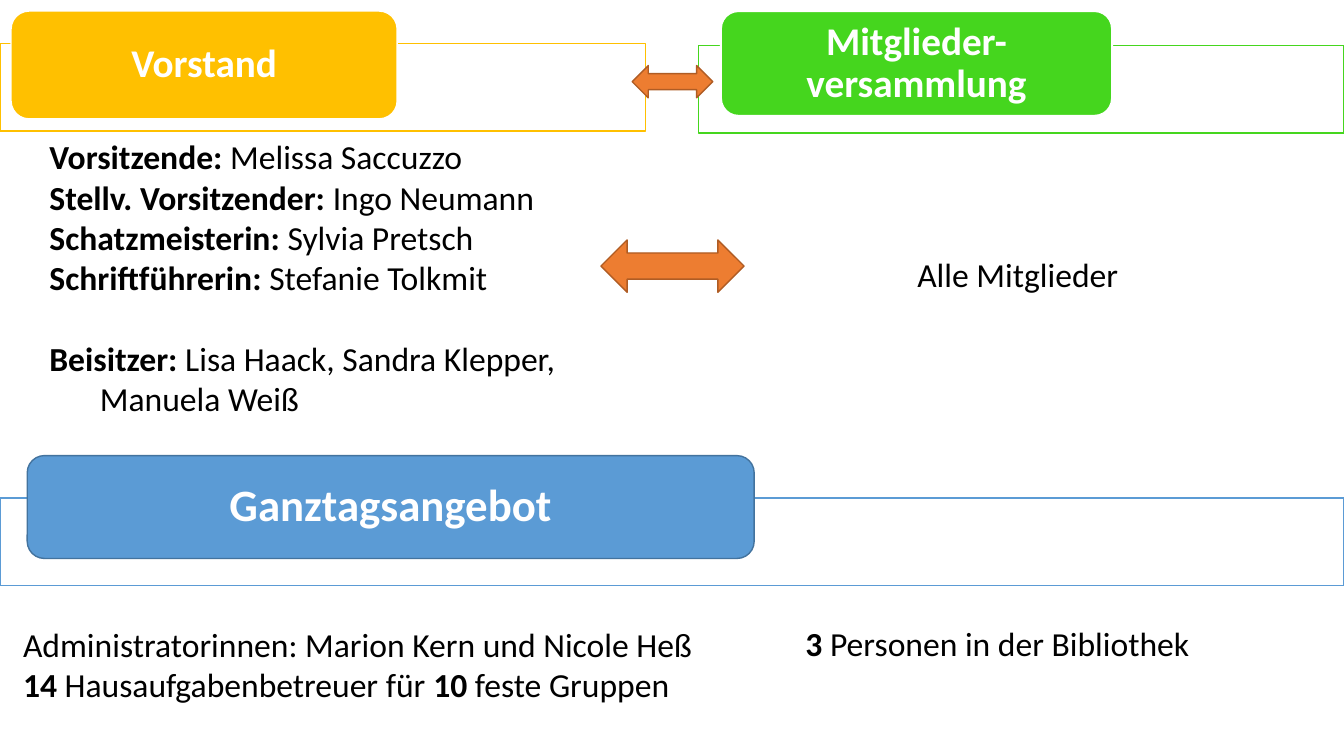
import pptx
import pptx.util
import pptx.dml.color
import pptx.enum.shapes
import pptx.enum.text
import lxml.etree

Inches, Pt = pptx.util.Inches, pptx.util.Pt
SHAPE = pptx.enum.shapes.MSO_SHAPE
ALIGN = pptx.enum.text.PP_ALIGN
ANCHOR = pptx.enum.text.MSO_ANCHOR
NS = "{http://schemas.openxmlformats.org/drawingml/2006/main}"

WHITE, BLACK = "FFFFFF", "000000"
GOLD, GREEN, BLUE, ORANGE = "FFC000", "45D61E", "5B9BD5", "ED7D31"


def paint(target, color):
    """Set a colour from a hex string on a fill, a line fill or a font."""
    if hasattr(target, "solid"):
        target.solid()
        target = target.fore_color
    else:
        target = target.color
    target.rgb = pptx.dml.color.RGBColor.from_string(color)


def write(frame, text, size=24, color=BLACK, align=ALIGN.LEFT, space=1.0,
          inset=(0.1, 0.05), anchor=ANCHOR.TOP, gaps=None, tab=None):
    """Write one paragraph per line; parts between asterisks are bold,
    and a vertical tab breaks the line. gaps: {line: points before}."""
    frame.word_wrap = True
    frame.auto_size = pptx.enum.text.MSO_AUTO_SIZE.NONE
    frame.vertical_anchor = anchor
    frame.margin_left = frame.margin_right = Inches(inset[0])
    frame.margin_top = frame.margin_bottom = Inches(inset[1])
    for row, line in enumerate(text.split("\n")):
        para = frame.paragraphs[0] if row == 0 else frame.add_paragraph()
        props = para._p.get_or_add_pPr()
        props.set("marL", "0")
        props.set("indent", "0")
        lxml.etree.SubElement(props, NS + "buNone")
        if tab:
            stops = lxml.etree.SubElement(props, NS + "tabLst")
            lxml.etree.SubElement(stops, NS + "tab", pos=str(Inches(tab)), algn="l")
        para.alignment = align
        para.line_spacing = space
        para.space_before = Pt((gaps or {}).get(row, 0))
        for part, chunk in enumerate(line.split("*")):
            for step, piece in enumerate(chunk.split("\v")):
                if step:
                    para.add_line_break()
                if piece:
                    run = para.add_run()
                    run.text = piece
                    run.font.name = "Calibri"
                    run.font.size = Pt(size)
                    run.font.bold = part % 2 == 1
                    paint(run.font, color)


class Deck:
    def __init__(self):
        self.file = pptx.Presentation()
        self.file.slide_width = Inches(13.33)
        self.file.slide_height = Inches(7.5)
        self.slide = self.file.slides.add_slide(self.file.slide_layouts[1])
        self.items = self.slide.shapes

    def shape(self, kind, box, fill, line, width=1):
        shape = self.items.add_shape(kind, *map(Inches, box))
        shape.shadow.inherit = False
        paint(shape.fill, fill)
        paint(shape.line.fill, line)
        shape.line.width = Pt(width)
        return shape

    def holder(self, index, box, text, **style):
        """Fill a placeholder and bring it to the front."""
        item = self.items.placeholders[index]
        item.left, item.top, item.width, item.height = map(Inches, box)
        self.items._spTree.append(item._element)
        write(item.text_frame, text, **style)

    def note(self, box, text, **style):
        write(self.items.add_textbox(*map(Inches, box)).text_frame, text, **style)

    def band(self, bar, badge, text, color, edge=WHITE, width=1, size=28,
             side=0.19, title=False):
        """Outlined bar with a rounded heading badge on it."""
        self.shape(SHAPE.RECTANGLE, bar, WHITE, color)
        shape = self.shape(SHAPE.ROUNDED_RECTANGLE, badge, color, edge, width)
        style = dict(size=size, color=WHITE, align=ALIGN.CENTER, space=0.9,
                     inset=(side, 0), anchor=ANCHOR.MIDDLE)
        if title:
            self.holder(0, badge, f"*{text}*", **style)
        else:
            write(shape.text_frame, f"*{text}*", **style)

    def arrow(self, box):
        self.shape(SHAPE.LEFT_RIGHT_ARROW, box, ORANGE, "AF5C24")


def main():
    deck = Deck()

    # Heading bands
    deck.band((0, 0.43, 6.4, 0.87), (0.11, 0.11, 3.83, 1.07),
              "Vorstand", GOLD, title=True)
    deck.band((6.93, 0.45, 6.4, 0.87), (7.15, 0.11, 3.88, 1.04),
              "Mitglieder- versammlung", GREEN, width=1.5)
    deck.band((0, 4.94, 13.33, 0.87), (0.27, 4.52, 7.21, 1.02),
              "Ganztagsangebot", BLUE, edge="43739E", size=32, side=0.36)

    # Board and members
    deck.holder(1, (0.39, 1.3, 6.37, 2.93),
                "*Vorsitzende:* Melissa Saccuzzo\n"
                "*Stellv. Vorsitzender: *Ingo Neumann\n"
                "*Schatzmeisterin: *Sylvia Pretsch\n"
                "*Schriftführerin: *Stefanie Tolkmit\n"
                "*Beisitzer: *Lisa Haack, Sandra Klepper, \v\tManuela Weiß",
                gaps={4: 29}, tab=2)
    deck.note((6.91, 2.47, 6.37, 0.5), "Alle Mitglieder", align=ALIGN.CENTER)

    # All-day programme
    deck.note((0.13, 6.14, 6.95, 1.31),
              "Administratorinnen: Marion Kern und Nicole Heß\n"
              "*14 *Hausaufgabenbetreuer für *10 *feste Gruppen")
    deck.note((7.89, 6.13, 5.44, 0.5), "*3 *Personen in der Bibliothek")

    # Arrows between board and members
    deck.arrow((5.96, 2.38, 1.42, 0.52))
    deck.arrow((6.27, 0.65, 0.8, 0.32))

    deck.file.save("out.pptx")


if __name__ == "__main__":
    main()
